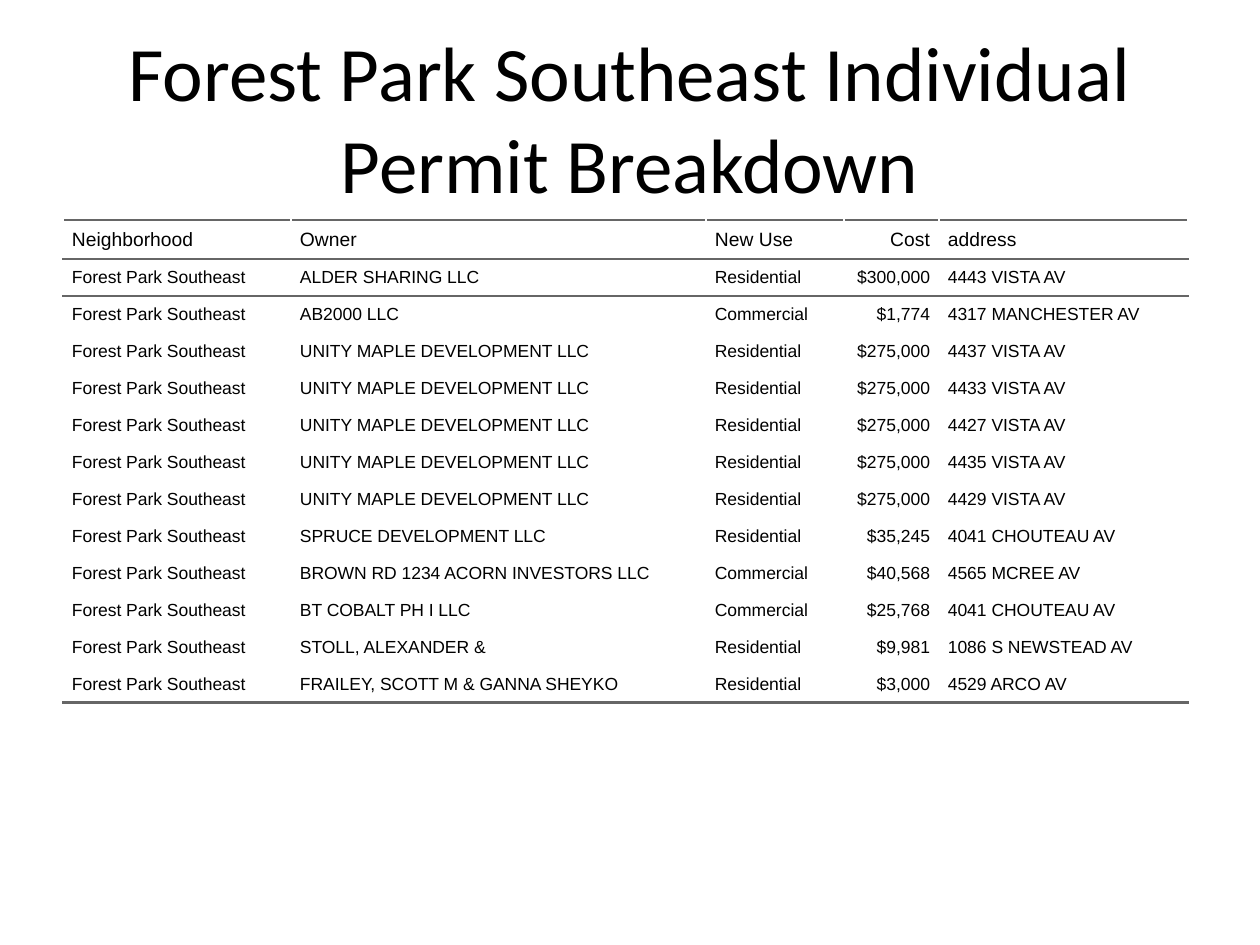
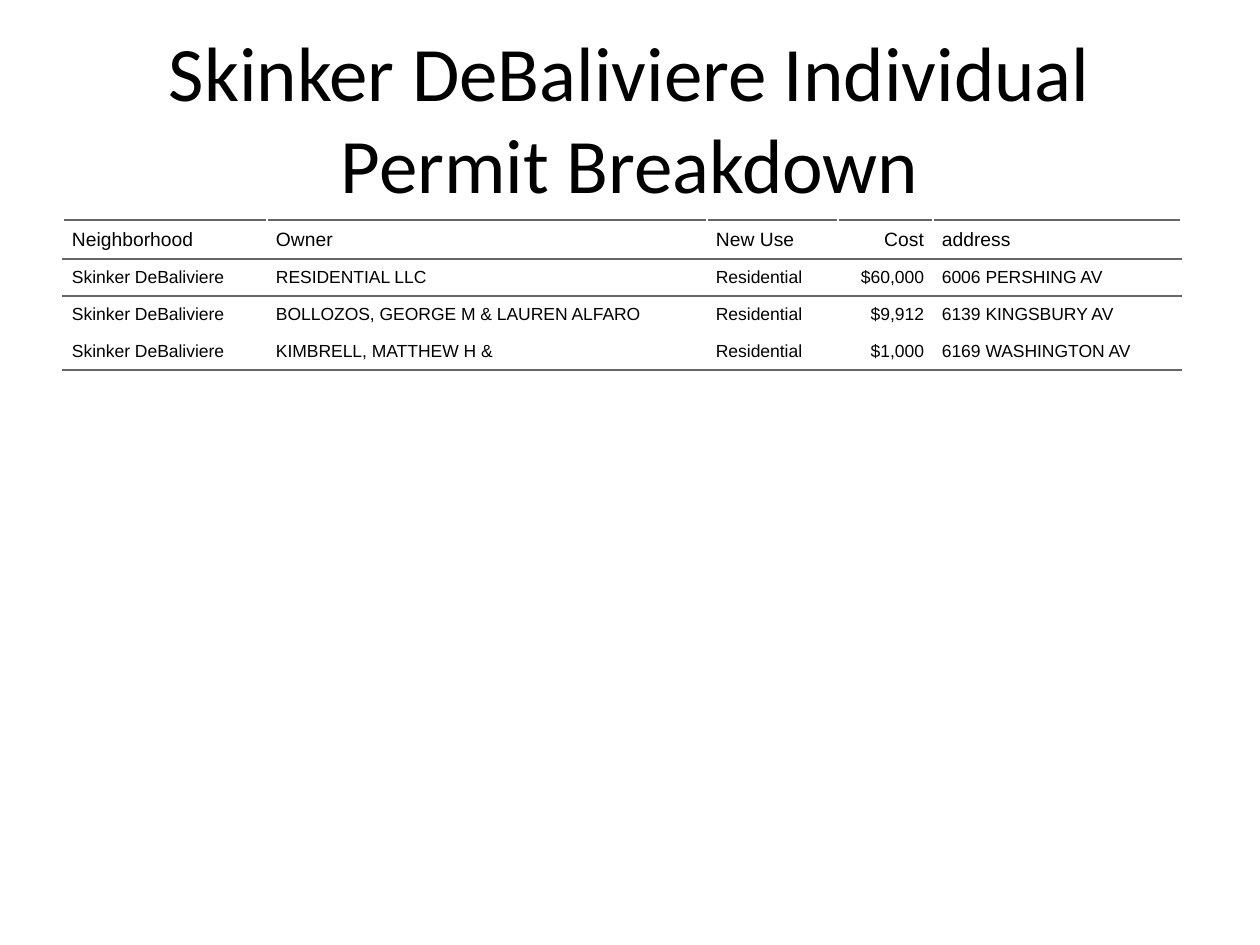
from lxml import etree
from pptx import Presentation
from pptx.dml.color import RGBColor
from pptx.enum.text import MSO_ANCHOR, MSO_AUTO_SIZE, PP_ALIGN
from pptx.oxml.ns import qn
from pptx.util import Emu, Pt

LEFT, CENTER, RIGHT = PP_ALIGN.LEFT, PP_ALIGN.CENTER, PP_ALIGN.RIGHT
MIDDLE = MSO_ANCHOR.MIDDLE
NO_AUTOFIT = MSO_AUTO_SIZE.NONE
BLACK = RGBColor(0x00, 0x00, 0x00)
WHITE = RGBColor(0xFF, 0xFF, 0xFF)
RULE_GRAY = RGBColor(0x66, 0x66, 0x66)

PX = 914400 / 126
SLIDE_SIZE = (1260, 945)
TITLE_BOX = (63, 38, 1134, 158)
TABLE_ORIGIN = (63, 220)
HEADER_HEIGHT, ROW_HEIGHT = 39, 37
RULE_WIDTH = Pt(1.5)
TITLE_ONLY = 5

TITLE_FONT = {"name": "Calibri", "size": Pt(44), "bold": False}
HEADER_FONT = {"name": "Arial", "size": Pt(11), "bold": False}
BODY_FONT = {"name": "Arial", "size": Pt(10), "bold": False}

HEADINGS = ("Neighborhood", "Owner", "New Use", "Cost", "address")
ALIGNMENTS = (LEFT, LEFT, LEFT, RIGHT, LEFT)

PERMIT_PAGES = [
    {
        "neighborhood": "Forest Park Southeast",
        "columns": (228, 415, 138, 95, 249),
        "permits": [
            ("ALDER SHARING LLC", "Residential", "$300,000", "4443 VISTA AV"),
            ("AB2000 LLC", "Commercial", "$1,774", "4317 MANCHESTER AV"),
            *[
                ("UNITY MAPLE DEVELOPMENT LLC", "Residential", "$275,000", f"{number} VISTA AV")
                for number in (4437, 4433, 4427, 4435, 4429)
            ],
            ("SPRUCE DEVELOPMENT LLC", "Residential", "$35,245", "4041 CHOUTEAU AV"),
            ("BROWN RD 1234 ACORN INVESTORS LLC", "Commercial", "$40,568", "4565 MCREE AV"),
            ("BT COBALT PH I LLC", "Commercial", "$25,768", "4041 CHOUTEAU AV"),
            ("STOLL, ALEXANDER &", "Residential", "$9,981", "1086 S NEWSTEAD AV"),
            ("FRAILEY, SCOTT M & GANNA SHEYKO", "Residential", "$3,000", "4529 ARCO AV"),
        ],
    },
    {
        "neighborhood": "Skinker DeBaliviere",
        "columns": (204, 440, 131, 95, 248),
        "permits": [
            ("RESIDENTIAL LLC", "Residential", "$60,000", "6006 PERSHING AV"),
            ("BOLLOZOS, GEORGE M & LAUREN ALFARO", "Residential", "$9,912", "6139 KINGSBURY AV"),
            ("KIMBRELL, MATTHEW H &", "Residential", "$1,000", "6169 WASHINGTON AV"),
        ],
    },
]


def px(length):
    """Turn a length in px into EMU."""
    return Emu(round(length * PX))


def apply_format(target, values):
    """Set each attribute of the target from a dict of values."""
    for name, value in values.items():
        setattr(target, name, value)


def write_text(frame, text, font, alignment):
    """Write one aligned paragraph in the given font."""
    para = frame.paragraphs[0]
    para.alignment = alignment
    span = para.add_run()
    span.text = text
    apply_format(span.font, font)
    span.font.color.rgb = BLACK


def add_rules(cell, edges):
    """Draw gray rules on the named edges of a cell, given in schema order."""
    properties = cell._tc.get_or_add_tcPr()
    for position, edge in enumerate(edges):
        line = etree.Element(qn(f"a:{edge}"), w=str(RULE_WIDTH))
        fill = etree.SubElement(line, qn("a:solidFill"))
        etree.SubElement(fill, qn("a:srgbClr"), val=str(RULE_GRAY))
        properties.insert(position, line)


def place_title(page, box, text):
    """Move the title placeholder into its box and write it."""
    title = page.shapes.title
    apply_format(title, dict(zip(("left", "top", "width", "height"), map(px, box))))
    apply_format(title.text_frame, {
        "word_wrap": True, "auto_size": NO_AUTOFIT, "vertical_anchor": MIDDLE,
    })
    write_text(title.text_frame, text, TITLE_FONT, CENTER)


def place_permit_table(page, origin, columns, records):
    """Build the ruled permit table with its top left corner at the origin."""
    last = len(records)
    height = HEADER_HEIGHT + ROW_HEIGHT * last
    size = (sum(columns), height)
    table = page.shapes.add_table(
        last + 1, len(columns), *map(px, origin + size)).table
    apply_format(table, {"first_row": False, "horz_banding": False})
    for column, width in zip(table.columns, columns):
        column.width = px(width)
    for index, values in enumerate([HEADINGS, *records]):
        is_header = index == 0
        table.rows[index].height = px(HEADER_HEIGHT if is_header else ROW_HEIGHT)
        font = HEADER_FONT if is_header else BODY_FONT
        edges = ("lnT", "lnB") if is_header else ("lnT",) if index == 1 else ()
        if index == last:
            edges += ("lnB",)
        for cell, text, alignment in zip(table.rows[index].cells, values, ALIGNMENTS):
            apply_format(cell, {
                "vertical_anchor": MIDDLE,
                "margin_left": px(9), "margin_right": px(9),
                "margin_top": px(8), "margin_bottom": px(8),
            })
            cell.fill.solid()
            cell.fill.fore_color.rgb = WHITE
            write_text(cell.text_frame, text, font, alignment)
            add_rules(cell, edges)


def add_permit_page(deck, neighborhood, columns, permits):
    """Add one slide that lists the permits of a neighborhood."""
    page = deck.slides.add_slide(deck.slide_layouts[TITLE_ONLY])
    place_title(page, TITLE_BOX, f"{neighborhood} Individual Permit Breakdown")
    records = [(neighborhood, *permit) for permit in permits]
    place_permit_table(page, TABLE_ORIGIN, columns, records)


def main():
    """Build and save the deck."""
    deck = Presentation()
    deck.slide_width, deck.slide_height = map(px, SLIDE_SIZE)
    for content in PERMIT_PAGES:
        add_permit_page(deck, **content)
    deck.save("out.pptx")


if __name__ == "__main__":
    main()
